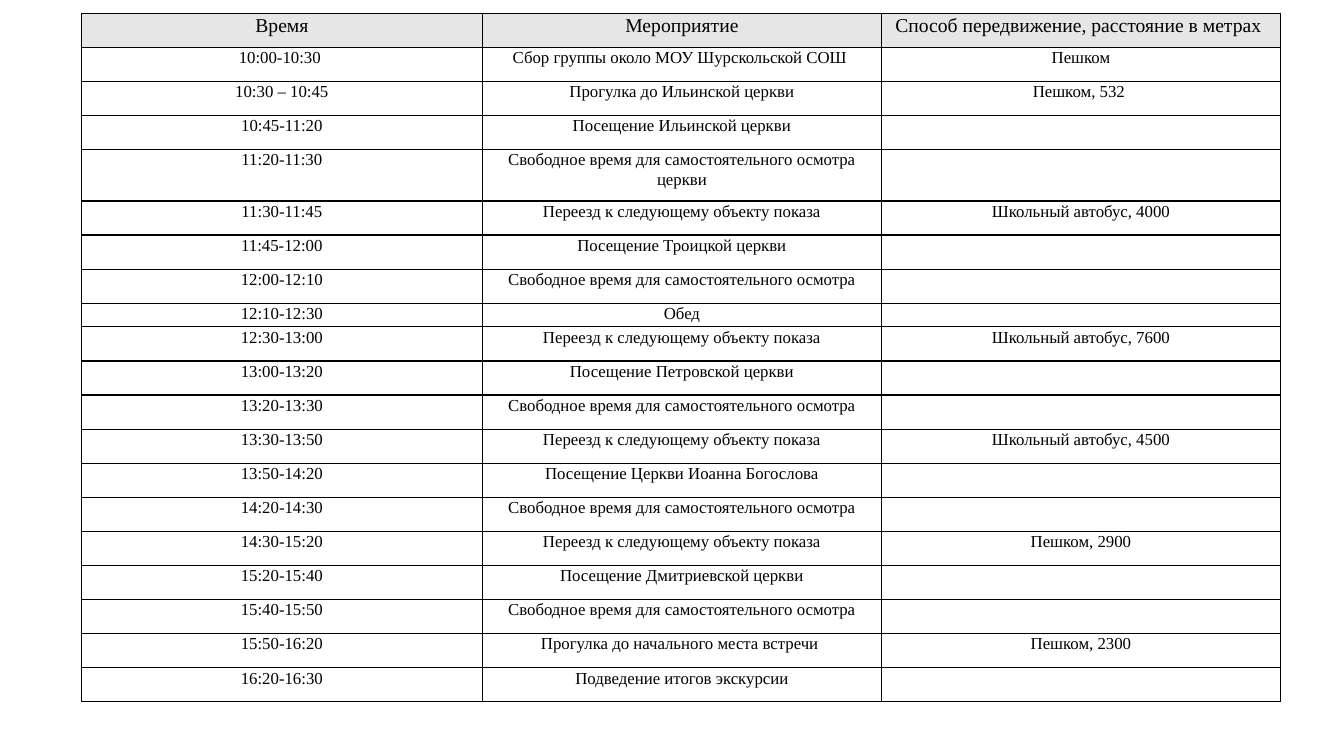
from lxml.etree import SubElement
from pptx import Presentation
from pptx.dml.color import RGBColor
from pptx.enum.text import PP_ALIGN
from pptx.oxml.ns import qn
from pptx.util import Pt

SCALE = 914400 // 192
FONT = "Times New Roman"
BLACK = "000000"
HEADER_FILL = "E7E6E6"
ROW_HEIGHT = 65
SPECIAL_HEIGHTS = {4: 98, 8: 45}
COLUMN_WIDTHS = (764, 760, 760)
TABLE_BOX = (155, 25, sum(COLUMN_WIDTHS), 1313)

HEADINGS = ("Время", "Мероприятие", "Способ передвижение, расстояние в метрах ")
FREE_TIME = "Свободное время для самостоятельного осмотра"
TRANSFER = "Переезд к следующему объекту показа"
SCHEDULE = (
    ("10:00-10:30 ", "Сбор группы около МОУ Шурскольской СОШ ", "Пешком"),
    ("10:30 – 10:45", "Прогулка до Ильинской церкви", "Пешком, 532 "),
    ("10:45-11:20", "Посещение Ильинской церкви", ""),
    ("11:20-11:30", FREE_TIME + " церкви", ""),
    ("11:30-11:45", TRANSFER, "Школьный автобус, 4000"),
    ("11:45-12:00", "Посещение Троицкой церкви", ""),
    ("12:00-12:10", FREE_TIME, ""),
    ("12:10-12:30", "Обед", ""),
    ("12:30-13:00", TRANSFER, "Школьный автобус, 7600"),
    ("13:00-13:20", "Посещение Петровской церкви", ""),
    ("13:20-13:30", FREE_TIME, ""),
    ("13:30-13:50", TRANSFER, "Школьный автобус, 4500"),
    ("13:50-14:20", "Посещение Церкви Иоанна Богослова", ""),
    ("14:20-14:30", FREE_TIME, ""),
    ("14:30-15:20", TRANSFER, "Пешком, 2900"),
    ("15:20-15:40", "Посещение Дмитриевской церкви", ""),
    ("15:40-15:50", FREE_TIME, ""),
    ("15:50-16:20", "Прогулка до начального места встречи ", "Пешком, 2300"),
    ("16:20-16:30", "Подведение итогов экскурсии", ""),
)

CELL_FORMAT = {
    "margin_left": 8 * SCALE,
    "margin_right": 8 * SCALE,
    "margin_top": 0,
    "margin_bottom": 0,
}
PARA_FORMAT = {"alignment": PP_ALIGN.CENTER, "line_spacing": 1.07}


def px(length):
    return length * SCALE


def color(value):
    return RGBColor.from_string(value)


def apply_format(target, values):
    for name, value in values.items():
        setattr(target, name, value)


def add_borders(cell):
    properties = cell._tc.get_or_add_tcPr()
    for side in ("lnL", "lnR", "lnT", "lnB"):
        line = SubElement(properties, qn("a:" + side), w=str(Pt(1)))
        fill = SubElement(line, qn("a:solidFill"))
        SubElement(fill, qn("a:srgbClr"), val=BLACK)


def fill_cell(cell, text, size, fill):
    apply_format(cell, CELL_FORMAT)
    add_borders(cell)
    if fill:
        cell.fill.solid()
        cell.fill.fore_color.rgb = color(fill)
    else:
        cell.fill.background()
    para = cell.text_frame.paragraphs[0]
    apply_format(para, PARA_FORMAT)
    if text:
        span = para.add_run()
        span.text = text
        apply_format(span.font, {"name": FONT, "size": Pt(size), "bold": False})
        span.font.color.rgb = color(BLACK)
    else:
        SubElement(para._p, qn("a:endParaRPr"), sz=str(size * 100))


def add_schedule(page, box):
    rows = (HEADINGS,) + SCHEDULE
    frame = page.shapes.add_table(len(rows), len(HEADINGS), *map(px, box))
    table = frame.table
    apply_format(table, {"first_row": False, "horz_banding": False})
    for column, width in zip(table.columns, COLUMN_WIDTHS):
        column.width = px(width)
    for index, texts in enumerate(rows):
        table.rows[index].height = px(SPECIAL_HEIGHTS.get(index, ROW_HEIGHT))
        size, fill = (12, None) if index else (14, HEADER_FILL)
        for cell, text in zip(table.rows[index].cells, texts):
            fill_cell(cell, text, size, fill)


def main():
    deck = Presentation()
    apply_format(deck, {"slide_width": px(2560), "slide_height": px(1440)})
    page = deck.slides.add_slide(deck.slide_layouts[6])
    add_schedule(page, TABLE_BOX)
    deck.save("out.pptx")


if __name__ == "__main__":
    main()
